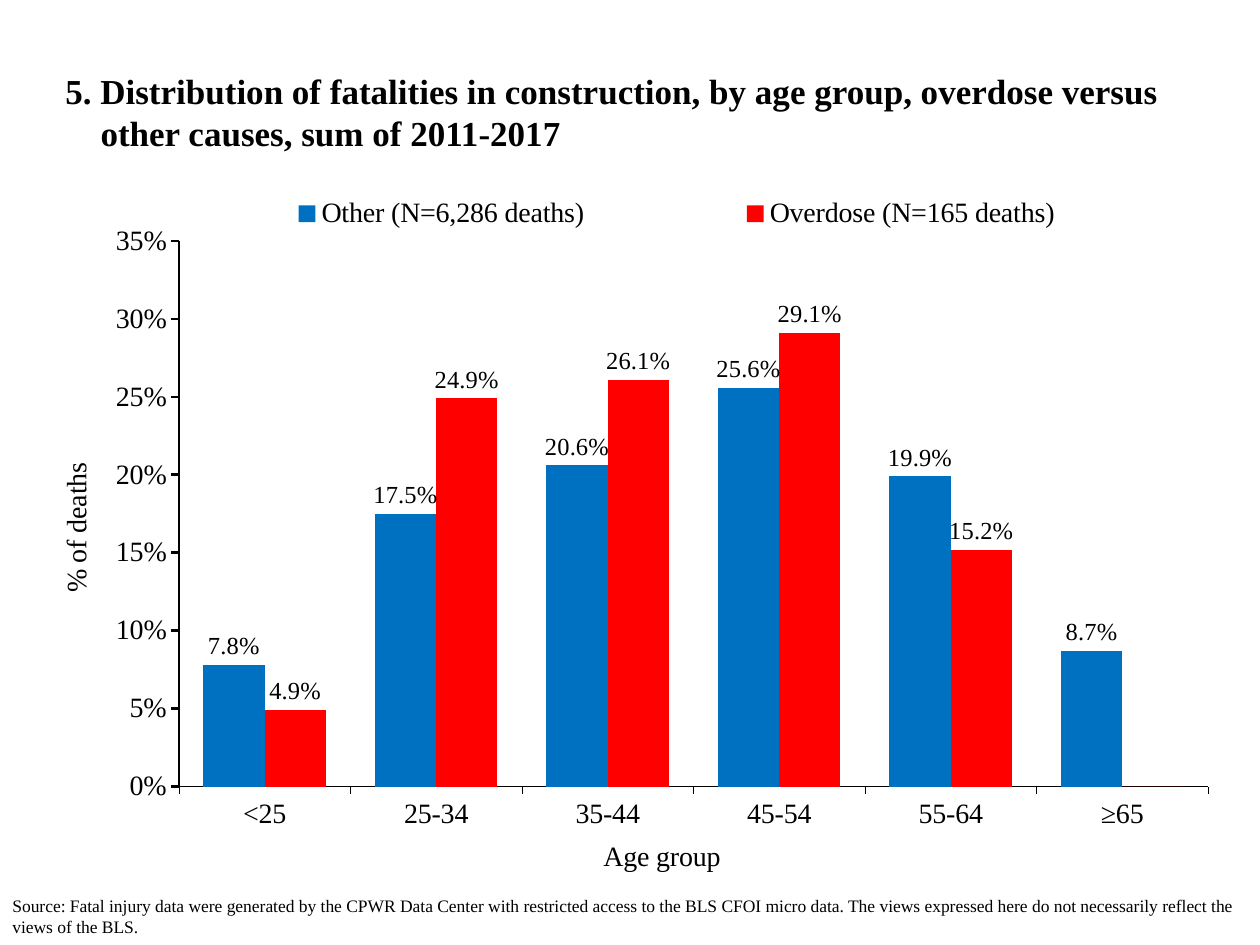
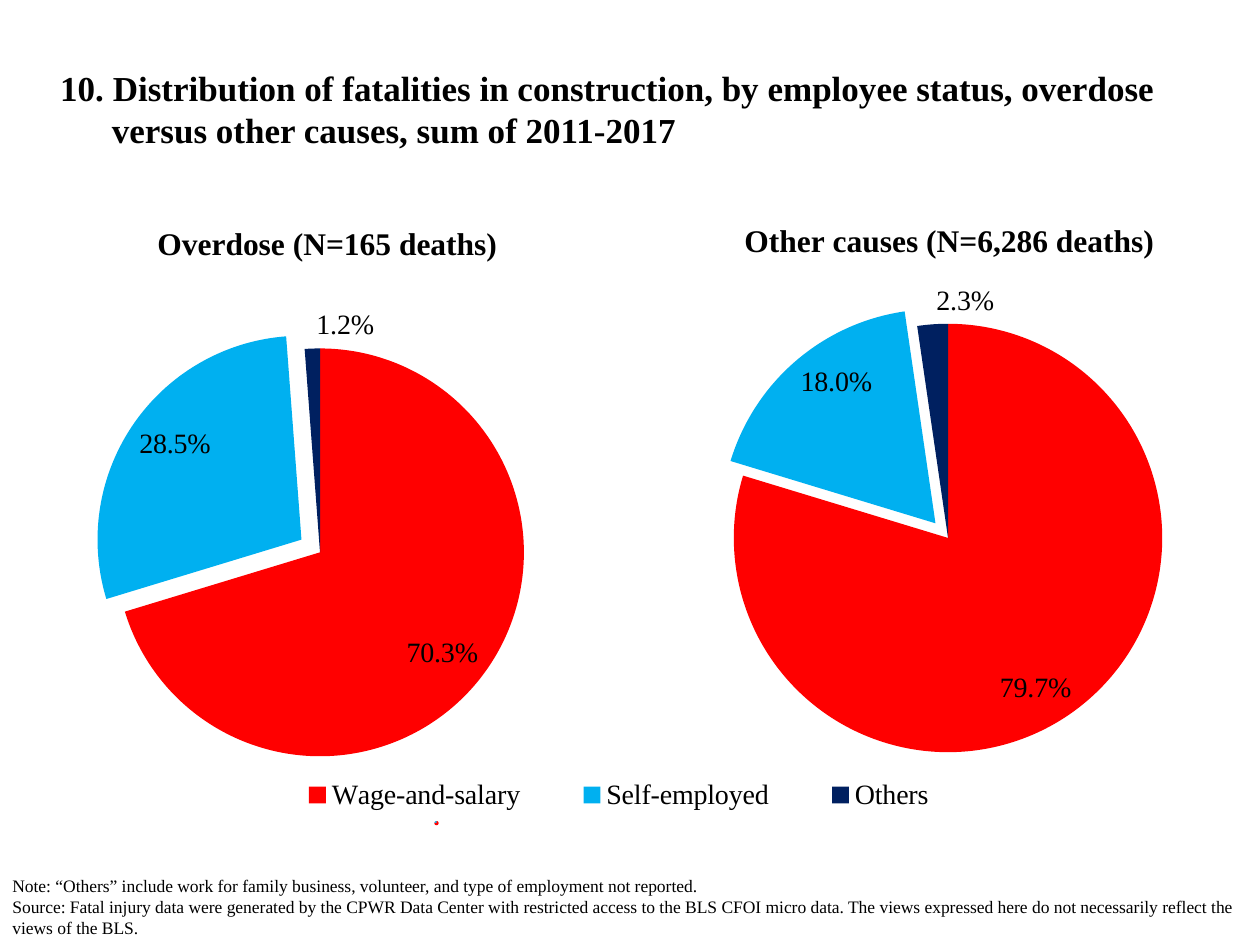
from copy import deepcopy

from lxml.etree import SubElement
from pptx import Presentation
from pptx.chart.data import CategoryChartData
from pptx.dml.color import RGBColor
from pptx.enum.chart import (XL_CHART_TYPE, XL_LABEL_POSITION,
                             XL_LEGEND_POSITION, XL_TICK_MARK)
from pptx.oxml import parse_xml
from pptx.oxml.ns import nsdecls, qn
from pptx.util import Inches, Pt

WIDTH, HEIGHT = Inches(10), Inches(7.5)
FONT = "Times New Roman"
BLACK = RGBColor(0x00, 0x00, 0x00)
RED = RGBColor(0xFF, 0x00, 0x00)
BLUE = RGBColor(0x00, 0x70, 0xC0)
SKY = RGBColor(0x00, 0xB0, 0xF0)
NAVY = RGBColor(0x00, 0x20, 0x60)
STATUS_COLORS = (RED, SKY, NAVY)
SOURCE = ("Source: Fatal injury data were generated by the CPWR Data Center with "
          "restricted access to the BLS CFOI micro data. The views expressed here "
          "do not necessarily reflect the views of the BLS.")


def place(left, top, width, height):
    """Turn shares of the slide's size into lengths."""
    return (int(WIDTH * left), int(HEIGHT * top),
            int(WIDTH * width), int(HEIGHT * height))


def style_font(font, size, bold=False):
    font.name = FONT
    font.size = Pt(size)
    font.bold = bold
    font.color.rgb = BLACK


def add_text(slide, box, lines, size, bold=False, hanging=0):
    """Write one paragraph per line; lines after the first are indented."""
    frame = slide.shapes.add_textbox(*place(*box)).text_frame
    frame.word_wrap = True
    for number, line in enumerate(lines):
        paragraph = frame.add_paragraph() if number else frame.paragraphs[0]
        run = paragraph.add_run()
        run.text = line
        style_font(run.font, size, bold)
        if number and hanging:
            paragraph._p.get_or_add_pPr().set("marL", str(Inches(hanging)))


def add_heading(slide, left, top, lines, hanging):
    add_text(slide, (left, top, 0.92, 0.1), lines, 20, True, hanging)


def set_layout(parent, index, inner=False, **shares):
    """Fix a chart part's x, y, w, h as shares of the chart."""
    for old in parent.findall(qn("c:layout")):
        parent.remove(old)
    layout = parse_xml(f"<c:layout {nsdecls('c')}><c:manualLayout/></c:layout>")
    manual = layout[0]
    if inner:
        SubElement(manual, qn("c:layoutTarget")).set("val", "inner")
    if parent.tag != qn("c:dLbl"):
        for side in "xy":
            SubElement(manual, qn(f"c:{side}Mode")).set("val", "edge")
    for side, share in shares.items():
        SubElement(manual, qn(f"c:{side}")).set("val", str(share))
    parent.insert(index, layout)


def set_plot(chart, x, y, w, h):
    plot_area = chart.element.find(".//" + qn("c:plotArea"))
    set_layout(plot_area, 0, inner=True, x=x, y=y, w=w, h=h)


def add_chart(slide, kind, box, categories, series):
    data = CategoryChartData()
    data.categories = categories
    for name, values in series:
        data.add_series(name, values)
    chart = slide.shapes.add_chart(kind, *place(*box), data).chart
    style_font(chart.font, 16)
    chart.has_title = False
    chart.has_legend = False
    return chart


def add_legend(chart, x, y, w, h):
    chart.has_legend = True
    legend = chart.legend
    legend.position = XL_LEGEND_POSITION.BOTTOM
    legend.include_in_layout = False
    style_font(legend.font, 16)
    set_layout(legend._element, 1, x=x, y=y, w=w, h=h)


def write_title(owner, text, size, bold=False):
    """Title a chart or an axis."""
    owner.has_title = True
    run = owner.axis_title if hasattr(owner, "axis_title") else owner.chart_title
    run = run.text_frame.paragraphs[0].add_run()
    run.text = text
    style_font(run.font, size, bold)


def style_axis(axis, title, line_width):
    axis.has_major_gridlines = False
    axis.major_tick_mark = XL_TICK_MARK.OUTSIDE
    axis.minor_tick_mark = XL_TICK_MARK.NONE
    axis.format.line.color.rgb = BLACK
    axis.format.line.width = Pt(line_width)
    write_title(axis, title, 16)


def style_labels(labels, size, number_format, position):
    style_font(labels.font, size)
    labels.number_format = number_format
    labels.number_format_is_linked = False
    labels.position = position


def add_age_chart(slide):
    chart = add_chart(
        slide, XL_CHART_TYPE.COLUMN_CLUSTERED, (0.042, 0.189, 0.917, 0.744),
        ("<25", "25-34", "35-44", "45-54", "55-64", "≥65"),
        (("Other (N=6,286 deaths)", (0.078, 0.175, 0.206, 0.256, 0.199, 0.087)),
         ("Overdose (N=165 deaths)", (0.049, 0.249, 0.261, 0.291, 0.152, 0))))
    set_plot(chart, 0.109, 0.089, 0.891, 0.776)
    add_legend(chart, 0.08, 0.015, 0.92, 0.07)
    style_axis(chart.category_axis, "Age group", 0.25)
    deaths = chart.value_axis
    style_axis(deaths, "% of deaths", 1.5)
    deaths.minimum_scale, deaths.maximum_scale, deaths.major_unit = 0, 0.35, 0.05
    deaths.tick_labels.number_format = "0%"
    deaths.tick_labels.number_format_is_linked = False
    columns = chart.plots[0]
    columns.gap_width, columns.overlap = 80, 0
    columns.vary_by_categories = False
    for cause, color in zip(columns.series, (BLUE, RED)):
        cause.format.fill.solid()
        cause.format.fill.fore_color.rgb = color
        style_labels(cause.data_labels, 14, "0.0%;;",
                     XL_LABEL_POSITION.OUTSIDE_END)
        cause.data_labels.show_value = True


def add_status_pie(slide, box, categories, values):
    chart = add_chart(slide, XL_CHART_TYPE.PIE, box, categories,
                      (("Series 1", values),))
    chart.plots[0].vary_by_categories = True
    for number, color in enumerate(STATUS_COLORS):
        fill = chart.plots[0].series[0].points[number].format.fill
        fill.solid()
        fill.fore_color.rgb = color
    return chart


def move_out_label(labels, number, shift):
    """Put one slice's label outside, shifted right by a share of the chart."""
    group = labels._element
    label = parse_xml(f'<c:dLbl {nsdecls("c")}><c:idx val="{number}"/></c:dLbl>')
    for part in group:
        if part.tag != qn("c:showLeaderLines"):
            label.append(deepcopy(part))
    label.find(qn("c:dLblPos")).set("val", "outEnd")
    set_layout(label, 1, x=shift, y=0)
    group.insert(0, label)


def add_cause_pie(slide, left, title, title_at, values, plot, explosion, shift):
    chart = add_status_pie(slide, (left, 0.222, 0.658, 0.622),
                           ("1", "2", "3"), values)
    write_title(chart, title, 18, True)
    set_layout(chart.chart_title._element, 1, x=title_at[0], y=title_at[1])
    set_plot(chart, *plot)
    slices = chart.plots[0].series[0]
    self_employed = slices._element.findall(qn("c:dPt"))[1]
    self_employed.insert(1, parse_xml(
        f'<c:explosion {nsdecls("c")} val="{explosion}"/>'))
    labels = slices.data_labels
    style_labels(labels, 16, "0.0%", XL_LABEL_POSITION.INSIDE_END)
    labels.show_value = False
    labels.show_percentage = True
    move_out_label(labels, 2, shift)


def add_status_legend(slide):
    chart = add_status_pie(slide, (0.175, 0.777, 0.608, 0.099),
                           ("Wage-and-salary", "Self-employed", "Others"),
                           (80, 18, 2))
    set_plot(chart, 0.266, 0.929, 0.032, 0.045)
    add_legend(chart, 0.045, 0.44, 0.95, 0.42)


def main():
    deck = Presentation()
    deck.slide_width, deck.slide_height = WIDTH, HEIGHT
    blank = deck.slide_layouts[6]

    age = deck.slides.add_slide(blank)
    add_age_chart(age)
    add_heading(age, 0.042, 0.067, (
        "5. Distribution of fatalities in construction, by age group, overdose versus",
        "other causes, sum of 2011-2017"), 0.28)
    add_text(age, (0, 0.941, 1, 0.059), (SOURCE,), 10)

    status = deck.slides.add_slide(blank)
    add_cause_pie(status, -0.075, "Overdose (N=165 deaths)", (0.297, 0.015),
                  (70.3, 28.5, 1.2), (0.254, 0.236, 0.492, 0.694), 11, 0.04)
    add_heading(status, 0.038, 0.064, (
        "10. Distribution of fatalities in construction, by employee status, overdose",
        "versus other causes, sum of 2011-2017"), 0.41)
    add_cause_pie(status, 0.433, "Other causes (N=6,286 deaths)", (0.233, 0.01),
                  (79.7, 18, 2.3), (0.227, 0.194, 0.517, 0.729), 9, 0.04)
    add_status_legend(status)
    add_text(status, (0, 0.919, 1, 0.081), (
        "Note: “Others” include work for family business, volunteer, "
        "and type of employment not reported.", SOURCE), 10)

    deck.save("out.pptx")


if __name__ == "__main__":
    main()
